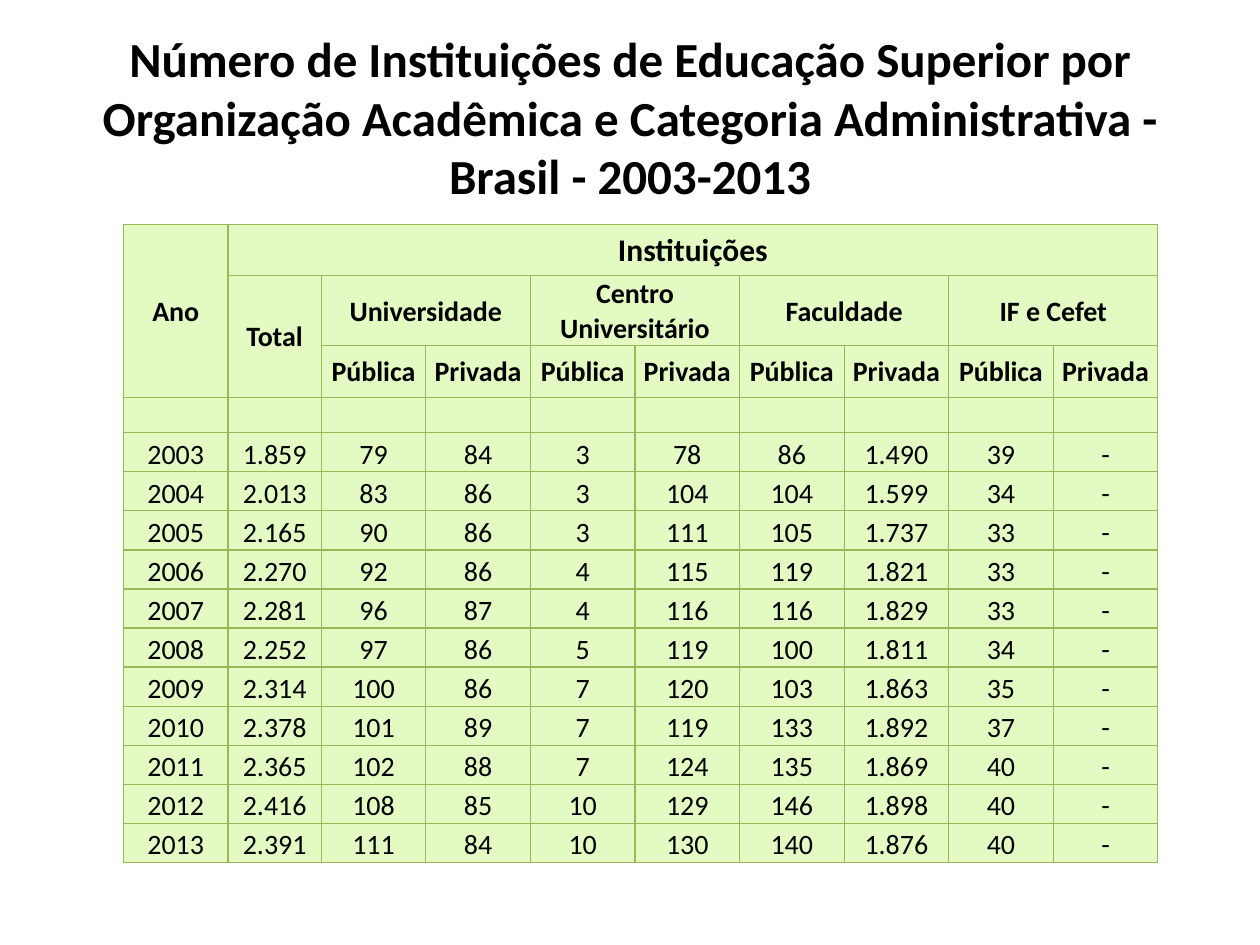
from lxml.etree import SubElement
from pptx import Presentation
from pptx.dml.color import RGBColor
from pptx.enum.text import MSO_ANCHOR as Anchor, PP_ALIGN as Align
from pptx.oxml.ns import qn
from pptx.util import Inches, Pt

TITLE = ("Número de Instituições de Educação Superior por Organização "
         "Acadêmica e Categoria Administrativa - Brasil - 2003-2013")
GROUPS = ["Universidade", "Centro Universitário", "Faculdade", "IF e Cefet"]
SECTORS = ["Pública", "Privada"]
# Year, total, then public and private for each group
DATA = [
    "2003 1.859 79 84 3 78 86 1.490 39 -",
    "2004 2.013 83 86 3 104 104 1.599 34 -",
    "2005 2.165 90 86 3 111 105 1.737 33 -",
    "2006 2.270 92 86 4 115 119 1.821 33 -",
    "2007 2.281 96 87 4 116 116 1.829 33 -",
    "2008 2.252 97 86 5 119 100 1.811 34 -",
    "2009 2.314 100 86 7 120 103 1.863 35 -",
    "2010 2.378 101 89 7 119 133 1.892 37 -",
    "2011 2.365 102 88 7 124 135 1.869 40 -",
    "2012 2.416 108 85 10 129 146 1.898 40 -",
    "2013 2.391 111 84 10 130 140 1.876 40 -",
]
COLORS = {"text": "000000", "fill": "E3FBC2", "border": "98B955"}
FONT = "Calibri"
BODY_SIZE = 16
HEADER_ROWS = 3
FIRST_DATA_ROW = HEADER_ROWS + 1  # an empty row follows the header
COL_WIDTHS = [0.83, 0.74] + [0.83] * 8
ROW_HEIGHTS = [0.41] * HEADER_ROWS + [0.25] + [0.31] * len(DATA)


def format_text(tf, size, bold):
    p = tf.paragraphs[0]
    p.alignment = Align.CENTER
    for r in p.runs:
        r.font.name = FONT
        r.font.size = Pt(size)
        r.font.bold = bold
        r.font.color.rgb = RGBColor.from_string(COLORS["text"])


def format_cell(cell):
    cell.margin_left = cell.margin_right = cell.margin_top = Inches(0.01)
    cell.margin_bottom = 0
    tc_pr = cell._tc.get_or_add_tcPr()
    for side in ("a:lnL", "a:lnR", "a:lnT", "a:lnB"):
        ln = SubElement(tc_pr, qn(side), w=str(Pt(0.75)))
        fill = SubElement(ln, qn("a:solidFill"))
        SubElement(fill, qn("a:srgbClr"), val=COLORS["border"])
    cell.fill.solid()
    cell.fill.fore_color.rgb = RGBColor.from_string(COLORS["fill"])


def write_cell(cell, text, size=BODY_SIZE, bold=True, anchor=Anchor.MIDDLE):
    cell.text_frame.text = text
    cell.vertical_anchor = anchor
    format_text(cell.text_frame, size, bold)


prs = Presentation()
prs.slide_width, prs.slide_height = Inches(10), Inches(7.5)
s = prs.slides.add_slide(prs.slide_layouts[5])

# Title
title = s.shapes.title
title.left, title.top = Inches(0.5), Inches(0.3)
title.width, title.height = Inches(9), Inches(1.25)
title.text_frame.text = TITLE
title.text_frame.vertical_anchor = Anchor.MIDDLE
format_text(title.text_frame, 28, True)

# Table grid
table = s.shapes.add_table(
    len(ROW_HEIGHTS), len(COL_WIDTHS), Inches(0.98), Inches(1.78),
    Inches(sum(COL_WIDTHS)), Inches(sum(ROW_HEIGHTS))).table
table.first_row = table.horz_banding = False
for col, width in zip(table.columns, COL_WIDTHS):
    col.width = Inches(width)
for row, height in zip(table.rows, ROW_HEIGHTS):
    row.height = Inches(height)
for cell in table.iter_cells():
    format_cell(cell)

# Header
HEADERS = [(0, 0, 2, 0, "Ano", 16), (0, 1, 0, 9, "Instituições", 18),
           (1, 1, 2, 1, "Total", 16)]
for i, group in enumerate(GROUPS):
    c = 2 + 2 * i
    HEADERS.append((1, c, 1, c + 1, group, 16))
    for j, sector in enumerate(SECTORS):
        write_cell(table.cell(2, c + j), sector)
for top, left, bottom, right, text, size in HEADERS:
    cell = table.cell(top, left)
    cell.merge(table.cell(bottom, right))
    write_cell(cell, text, size)

# Empty row keeps the body text size
for cell in table.rows[HEADER_ROWS].cells:
    SubElement(cell.text_frame.paragraphs[0]._p, qn("a:endParaRPr"),
               sz=str(BODY_SIZE * 100))

# Data rows
for i, line in enumerate(DATA, FIRST_DATA_ROW):
    for j, value in enumerate(line.split()):
        write_cell(table.cell(i, j), value, bold=False, anchor=Anchor.BOTTOM)

prs.save("out.pptx")
